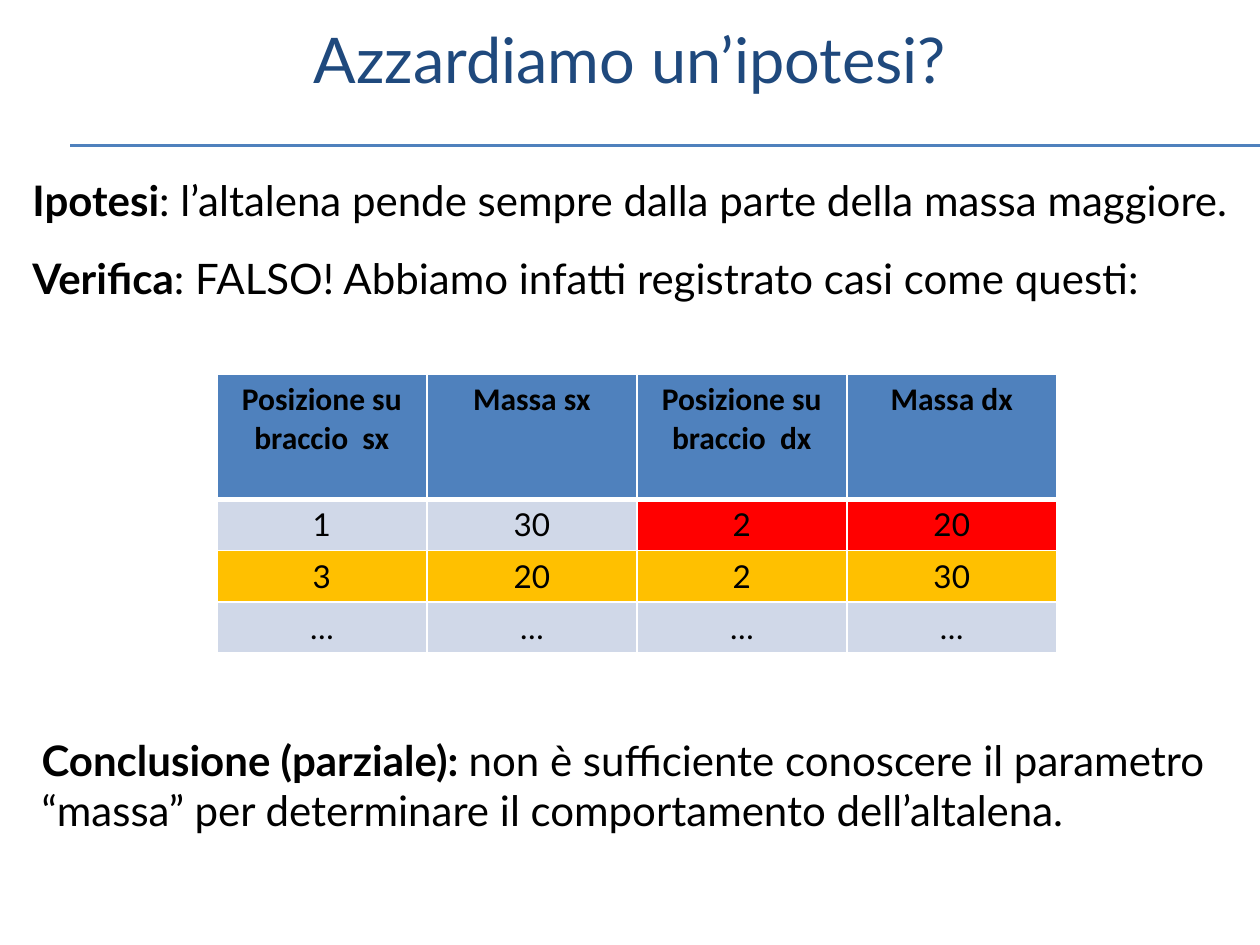
from lxml.etree import SubElement
from pptx import Presentation
from pptx.dml.color import RGBColor
from pptx.enum.shapes import MSO_CONNECTOR
from pptx.enum.text import MSO_ANCHOR, PP_ALIGN
from pptx.oxml.ns import qn
from pptx.util import Pt

COLORS = {"title": "1F497D", "blue": "4F81BD", "text": "000000", "border": "FFFFFF",
          "pale": "D0D8E8", "red": "FF0000", "amber": "FFC000"}


def add_text(x, y, w, h, runs, size=24, color="text"):
    """Add a wrapped text box with one paragraph of (text, bold) runs."""
    tf = s.shapes.add_textbox(Pt(x), Pt(y), Pt(w), Pt(h)).text_frame
    tf.word_wrap = True
    p = tf.paragraphs[0]
    p.font.name, p.font.size = "Lato", Pt(size)
    p.font.color.rgb = RGBColor.from_string(COLORS[color])
    for text, bold in runs:
        r = p.add_run()
        r.text = text
        r.font.bold = bold
    return tf


def add_border(cell, side, width):
    ln = SubElement(cell._tc.get_or_add_tcPr(), qn(f"a:ln{side}"), w=str(Pt(width)))
    fill = SubElement(ln, qn("a:solidFill"))
    SubElement(fill, qn("a:srgbClr"), val=COLORS["border"])


prs = Presentation()
prs.slide_width, prs.slide_height = Pt(720), Pt(540)
s = prs.slides.add_slide(prs.slide_layouts[6])

# Rules under the title
for y in (82.8, 83.5):
    rule = s.shapes.add_connector(MSO_CONNECTOR.STRAIGHT, Pt(40.3), Pt(y), Pt(720), Pt(y))
    rule.line.color.rgb = RGBColor.from_string(COLORS["blue"])
    rule.line.width = Pt(0.75)
    SubElement(rule._element.spPr, qn("a:effectLst"))

# Title and statements
tf = add_text(0, 0, 720, 66.2, [("Azzardiamo un’ipotesi?", False)], 36, "title")
tf.vertical_anchor = MSO_ANCHOR.MIDDLE
tf.paragraphs[0].alignment = PP_ALIGN.CENTER
add_text(11.5, 96, 698, 36, [
    ("Ipotesi", True),
    (": l’altalena pende sempre dalla parte della massa maggiore.", False)])
add_text(11.5, 140.6, 698, 36, [
    ("Verifica", True),
    (": FALSO! Abbiamo infatti registrato casi come questi:", False)])
add_text(16.7, 416.2, 692, 65.5, [
    ("Conclusione (parziale): ", True),
    ("non è sufficiente conoscere il parametro “massa” per determinare "
     "il comportamento dell’altalena.", False)])

# Table of recorded cases
rows = [
    (["Posizione su braccio  sx", "Massa sx", "Posizione su braccio  dx", "Massa dx"],
     ["blue"] * 4),
    (["1", "30", "2", "20"], ["pale", "pale", "red", "red"]),
    (["3", "20", "2", "30"], ["amber"] * 4),
    (["…"] * 4, ["pale"] * 4),
]
table = s.shapes.add_table(4, 4, Pt(123.9), Pt(214.1), Pt(480), Pt(159)).table
for i, (texts, fills) in enumerate(rows):
    table.rows[i].height = Pt(71.4 if i == 0 else 29.2)
    for j, (text, fill) in enumerate(zip(texts, fills)):
        table.columns[j].width = Pt(120)
        cell = table.cell(i, j)
        for side, width in (("L", 1), ("R", 1), ("T", 3 if i == 1 else 1),
                            ("B", 3 if i == 0 else 1)):
            add_border(cell, side, width)
        cell.fill.solid()
        cell.fill.fore_color.rgb = RGBColor.from_string(COLORS[fill])
        p = cell.text_frame.paragraphs[0]
        p.text = text
        p.alignment = PP_ALIGN.CENTER
        p.font.name = "Calibri" if i == 0 else "Lato"
        p.font.size = Pt(18)
        p.font.bold = i == 0
        p.font.color.rgb = RGBColor.from_string(COLORS["text"])

prs.save("out.pptx")
